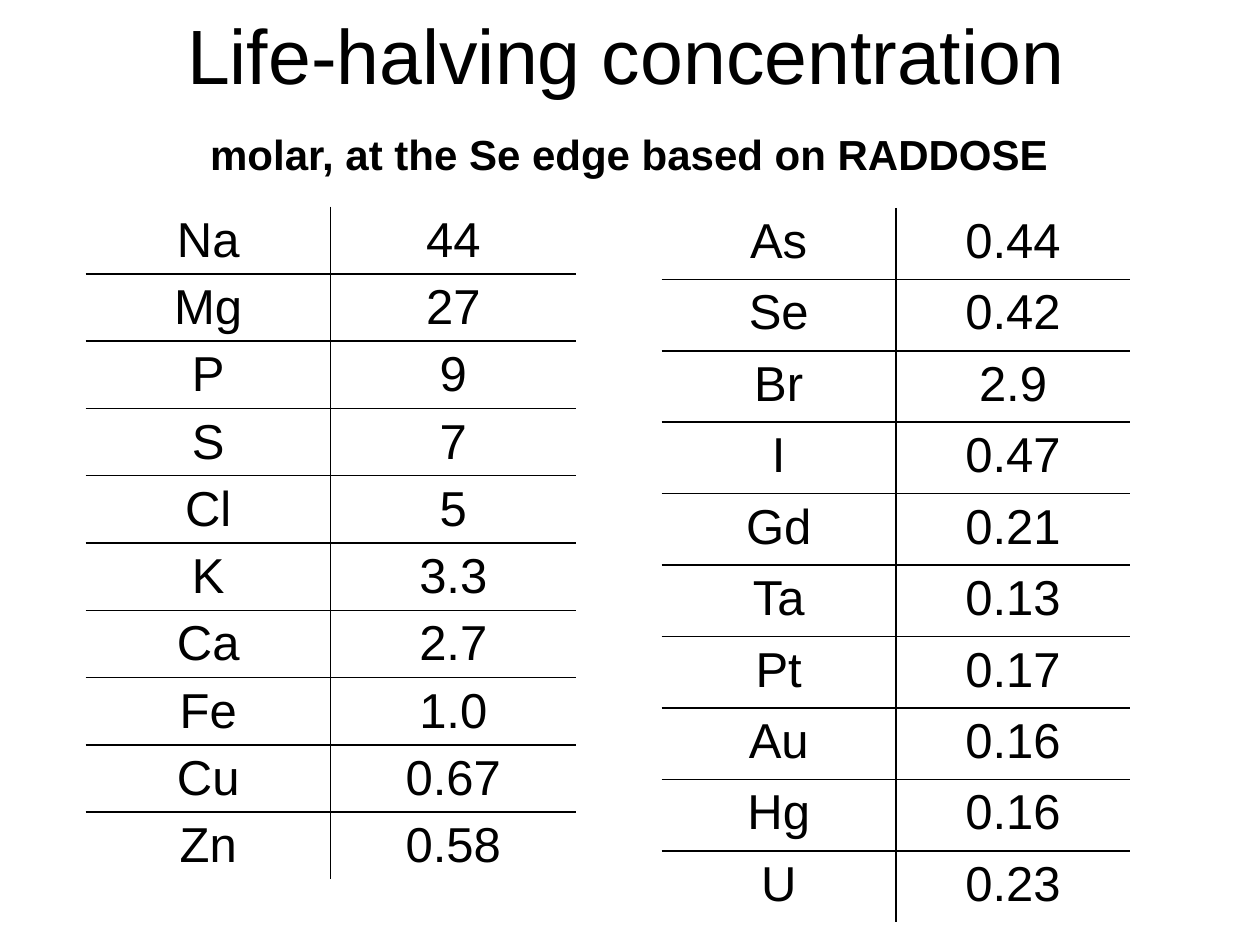
from lxml.etree import SubElement
from pptx import Presentation
from pptx.dml.color import RGBColor
from pptx.enum.text import MSO_ANCHOR, PP_ALIGN
from pptx.oxml.ns import qn
from pptx.util import Inches, Pt

BLACK = RGBColor(0x00, 0x00, 0x00)
FACE = "Arial"
LIGHT = [("Na", "44"), ("Mg", "27"), ("P", "9"), ("S", "7"), ("Cl", "5"),
         ("K", "3.3"), ("Ca", "2.7"), ("Fe", "1.0"), ("Cu", "0.67"), ("Zn", "0.58")]
HEAVY = [("As", "0.44"), ("Se", "0.42"), ("Br", "2.9"), ("I", "0.47"), ("Gd", "0.21"),
         ("Ta", "0.13"), ("Pt", "0.17"), ("Au", "0.16"), ("Hg", "0.16"), ("U", "0.23")]


def write(frame, text, size, align, bold=False):
    frame.text = text
    line = frame.paragraphs[0]
    line.alignment = align
    font = line.runs[0].font
    font.name, font.size, font.bold = FACE, Pt(size), bold
    font.color.rgb = BLACK


def place(shape, left, top, width, height):
    shape.left, shape.top = Inches(left), Inches(top)
    shape.width, shape.height = Inches(width), Inches(height)


def add_title(slide, text):
    title = slide.shapes.title
    place(title, 0.47, -0.2, 9, 1.25)
    title.text_frame.vertical_anchor = MSO_ANCHOR.MIDDLE
    write(title.text_frame, text, 44, PP_ALIGN.CENTER)


def add_note(slide, text):
    box = slide.shapes.add_textbox(0, 0, 0, 0)
    place(box, 1.57, 0.97, 6.87, 0.5)
    box.text_frame.word_wrap = False
    write(box.text_frame, text, 24, PP_ALIGN.LEFT, True)


def rule(cell, shown):
    props = cell._tc.get_or_add_tcPr()
    for side in "LRTB":
        line = SubElement(props, qn(f"a:ln{side}"), w=str(Pt(1)))
        if side in shown:
            fill = SubElement(line, qn("a:solidFill"))
            SubElement(fill, qn("a:srgbClr"), val=str(BLACK))
        else:
            SubElement(line, qn("a:noFill"))
    cell.fill.background()


def add_grid(slide, data, left, top, width, height):
    count = len(data)
    frame = slide.shapes.add_table(count, 2, Inches(left), Inches(top),
                                   Inches(width), Inches(height))
    table = frame.table
    table.first_row = table.horz_banding = False
    for row, pair in enumerate(data):
        for col, text in enumerate(pair):
            cell = table.cell(row, col)
            cell.margin_top, cell.margin_bottom = Inches(0.05), Inches(0.03)
            write(cell.text_frame, text, 28, PP_ALIGN.CENTER)
            shown = "RL"[col] + ("T" if row else "") + ("B" if row < count - 1 else "")
            rule(cell, shown)


def main():
    deck = Presentation()
    deck.slide_width, deck.slide_height = Inches(10), Inches(7.5)
    slide = deck.slides.add_slide(deck.slide_layouts[5])
    add_title(slide, "Life-halving concentration")
    add_grid(slide, LIGHT, 0.68, 1.64, 3.89, 5.34)
    add_note(slide, "molar, at the Se edge based on RADDOSE")
    add_grid(slide, HEAVY, 5.25, 1.65, 3.72, 5.67)
    deck.save("out.pptx")


if __name__ == "__main__":
    main()
